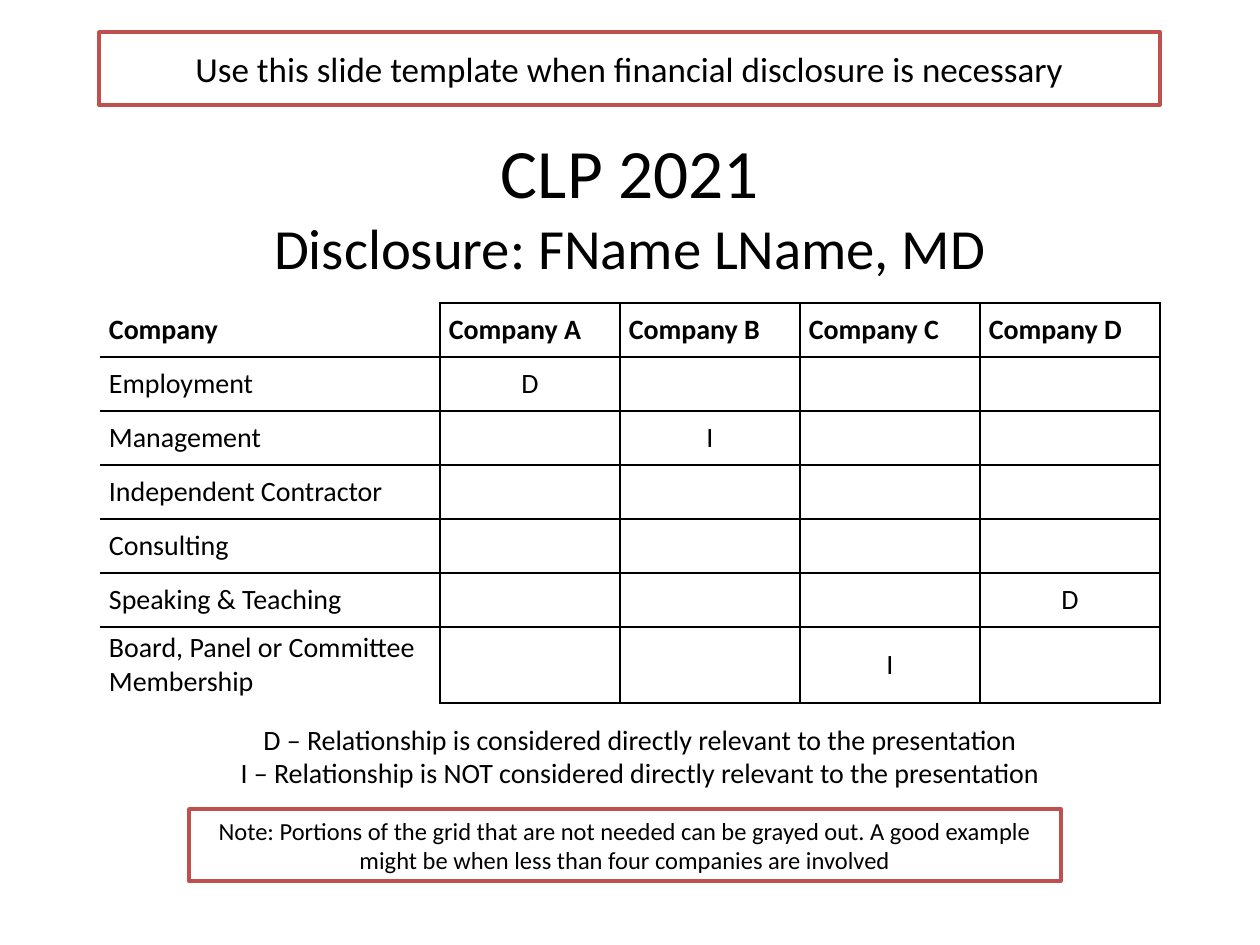
from lxml.etree import SubElement
from pptx import Presentation
from pptx.dml.color import RGBColor
from pptx.enum.shapes import MSO_SHAPE
from pptx.enum.text import MSO_ANCHOR, PP_ALIGN
from pptx.oxml.ns import qn
from pptx.util import Pt

PX = 914400 // 126
COLORS = {"text": "000000", "grid": "000000", "fill": "FFFFFF", "accent": "C0504D"}


def write(p, text, size, align=PP_ALIGN.CENTER, bold=False):
    p.alignment = align
    r = p.add_run()
    r.text = text
    fmt = {"name": "Calibri", "size": Pt(size), "bold": bold}
    for key, value in fmt.items():
        setattr(r.font, key, value)
    r.font.color.rgb = RGBColor.from_string(COLORS["text"])


def set_border(cell, side, visible):
    ln = SubElement(cell._tc.get_or_add_tcPr(), qn(f"a:ln{side}"), w=str(Pt(1)))
    if visible:
        fill = SubElement(ln, qn("a:solidFill"))
        SubElement(fill, qn("a:srgbClr"), val=COLORS["grid"])
    else:
        SubElement(ln, qn("a:noFill"))


prs = Presentation()
prs.slide_width, prs.slide_height = 1260 * PX, 945 * PX
s = prs.slides.add_slide(prs.slide_layouts[5])

# Title
title = s.shapes.title
box = {"left": 63, "top": 126, "width": 1134, "height": 158}
for key, value in box.items():
    setattr(title, key, value * PX)
tf = title.text_frame
tf.vertical_anchor = MSO_ANCHOR.MIDDLE
p = tf.paragraphs[0]
write(p, "CLP 2021", 39.6)
p.add_line_break()
write(p, "Disclosure: FName LName, MD", 32.4)

# Disclosure grid
headers = ["Company", "Company A", "Company B", "Company C", "Company D"]
relations = ["Employment", "Management", "Independent Contractor", "Consulting",
             "Speaking & Teaching", "Board, Panel or Committee Membership"]
marks = {(1, 1): "D", (2, 2): "I", (5, 4): "D", (6, 3): "I"}
widths = [340] + [180] * 4
heights = [54] * 6 + [76]
frame = s.shapes.add_table(len(heights), len(widths), 100 * PX, 303 * PX,
                           sum(widths) * PX, sum(heights) * PX)
table = frame.table
table.first_row = table.horz_banding = False
for col, width in zip(table.columns, widths):
    col.width = width * PX
for row, height in zip(table.rows, heights):
    row.height = height * PX

last = len(relations)
cell_format = {"vertical_anchor": MSO_ANCHOR.MIDDLE, "margin_left": 9 * PX,
               "margin_right": 9 * PX, "margin_top": 0, "margin_bottom": 0}
for i in range(len(heights)):
    for j in range(len(widths)):
        cell = table.cell(i, j)
        for key, value in cell_format.items():
            setattr(cell, key, value)
        # The label column is open on its outer sides
        visible = {"L": j > 0, "R": True, "T": j > 0 or i > 0, "B": j > 0 or i < last}
        for side, shown in visible.items():
            set_border(cell, side, shown)
        cell.fill.background()
        p = cell.text_frame.paragraphs[0]
        if i == 0:
            write(p, headers[j], 16, PP_ALIGN.LEFT, bold=True)
        elif j == 0:
            write(p, relations[i - 1], 16, PP_ALIGN.LEFT)
        elif (i, j) in marks:
            write(p, marks[i, j], 16)
        else:
            p.font.size = Pt(16)

# Legend
tf = s.shapes.add_textbox(84 * PX, 716 * PX, 1112 * PX, 81 * PX).text_frame
tf.word_wrap = True
write(tf.paragraphs[0], "D – Relationship is considered directly relevant to the presentation", 16)
write(tf.add_paragraph(), "I – Relationship is NOT considered directly relevant to the presentation", 16)

# Framed instructions: text, size, paragraph spacing, position and size
notes = [
    ("Note: Portions of the grid that are not needed can be grayed out. A good example "
     "might be when less than four companies are involved", 14, 0, (189, 809, 872, 72)),
    ("Use this slide template when financial disclosure is necessary", 20, 6,
     (99, 32, 1061, 73)),
]
for text, size, gap, place in notes:
    sp = s.shapes.add_shape(MSO_SHAPE.RECTANGLE, *(v * PX for v in place))
    sp.shadow.inherit = False
    sp.fill.solid()
    sp.fill.fore_color.rgb = RGBColor.from_string(COLORS["fill"])
    sp.line.color.rgb = RGBColor.from_string(COLORS["accent"])
    sp.line.width = Pt(2)
    tf = sp.text_frame
    tf.word_wrap = True
    tf.vertical_anchor = MSO_ANCHOR.MIDDLE
    p = tf.paragraphs[0]
    p.space_before = p.space_after = Pt(gap)
    write(p, text, size)

prs.save("out.pptx")
